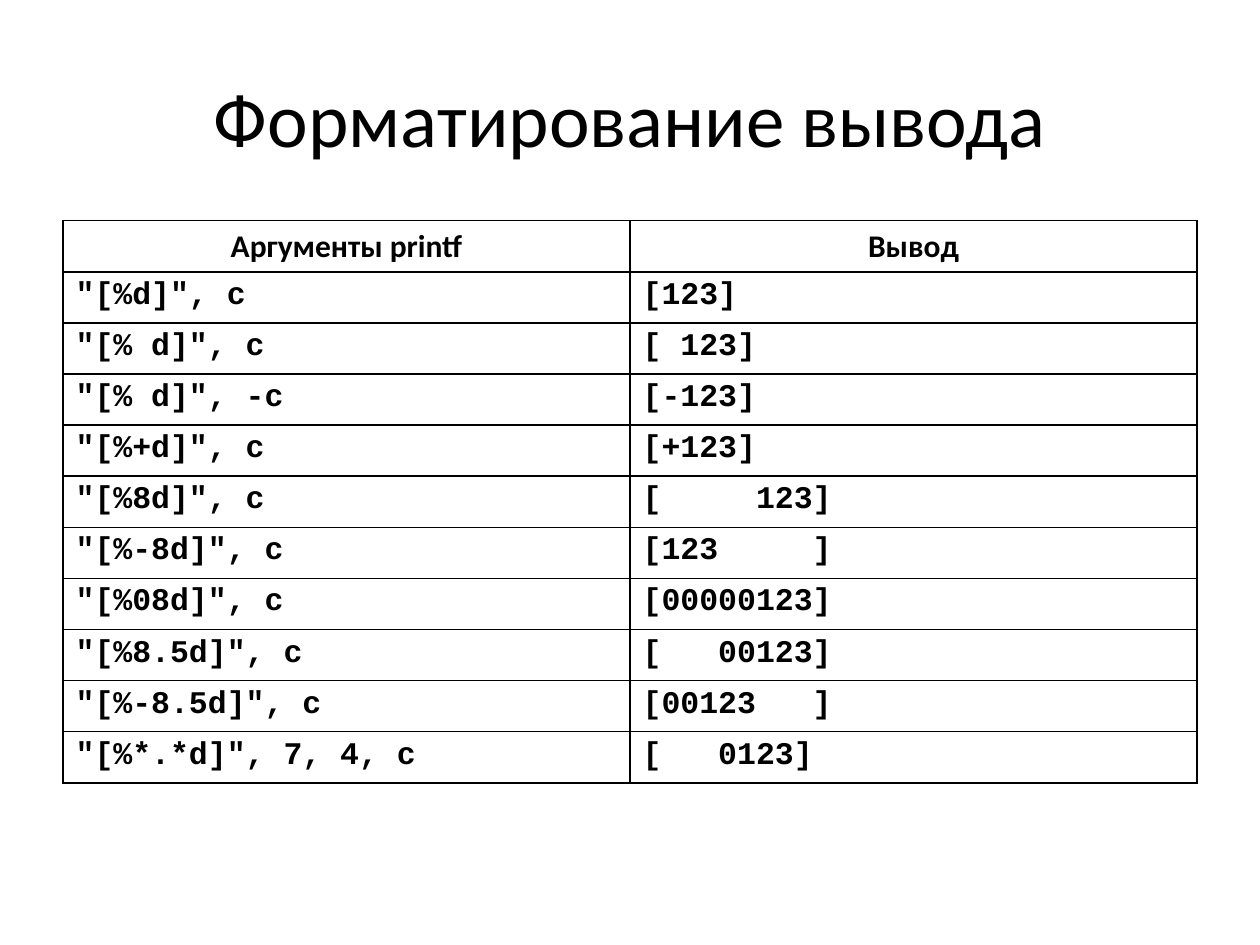
from dataclasses import dataclass

import pptx
import pptx.dml.color
import pptx.enum.text
import pptx.oxml.ns
import pptx.util
from lxml import etree
from pptx.util import Cm, Pt

BLACK = "000000"
WHITE = "FFFFFF"
ROW_HEIGHT = Cm(1.03)
COLUMN_WIDTH = Cm(11.43)
MARGIN = Cm(1.27)


@dataclass
class FormatExample:
    arguments: str
    output: str


HEADINGS = FormatExample("Аргументы printf", "Вывод")
EXAMPLES = [
    FormatExample('"[%d]", c', "[123]"),
    FormatExample('"[% d]", c', "[ 123]"),
    FormatExample('"[% d]", -c', "[-123]"),
    FormatExample('"[%+d]", c', "[+123]"),
    FormatExample('"[%8d]", c', "[     123]"),
    FormatExample('"[%-8d]", c', "[123     ]"),
    FormatExample('"[%08d]", c', "[00000123]"),
    FormatExample('"[%8.5d]", c', "[   00123]"),
    FormatExample('"[%-8.5d]", c', "[00123   ]"),
    FormatExample('"[%*.*d]", 7, 4, c', "[   0123]"),
]


def rgb(value: str) -> pptx.dml.color.RGBColor:
    return pptx.dml.color.RGBColor.from_string(value)


def set_text(frame, text: str, font: str, size: int, bold: bool, centred: bool) -> None:
    frame.text = text
    paragraph = frame.paragraphs[0]
    align = pptx.enum.text.PP_ALIGN
    paragraph.alignment = align.CENTER if centred else align.LEFT
    for run in paragraph.runs:
        run.font.name = font
        run.font.size = Pt(size)
        run.font.bold = bold
        run.font.color.rgb = rgb(BLACK)


def add_borders(cell, color: str, width: int) -> None:
    qn = pptx.oxml.ns.qn
    properties = cell._tc.get_or_add_tcPr()
    for side in ("lnL", "lnR", "lnT", "lnB"):
        line = etree.SubElement(properties, qn(f"a:{side}"), w=str(width))
        fill = etree.SubElement(line, qn("a:solidFill"))
        etree.SubElement(fill, qn("a:srgbClr"), val=color)


def fill_row(table, index: int, example: FormatExample, font: str, centred: bool) -> None:
    table.rows[index].height = ROW_HEIGHT
    for cell, text in zip(table.rows[index].cells, (example.arguments, example.output)):
        set_text(cell.text_frame, text, font, 18, True, centred)
        add_borders(cell, BLACK, Pt(1))
        cell.fill.solid()
        cell.fill.fore_color.rgb = rgb(WHITE)


def main() -> None:
    presentation = pptx.Presentation()
    presentation.slide_width, presentation.slide_height = Cm(25.4), Cm(19.05)
    slide = presentation.slides.add_slide(presentation.slide_layouts[5])

    # Title
    heading = slide.shapes.title
    heading.left, heading.top = MARGIN, Cm(0.76)
    heading.width, heading.height = 2 * COLUMN_WIDTH, Cm(3.18)
    set_text(heading.text_frame, "Форматирование вывода", "Calibri", 44, False, True)
    heading.text_frame.vertical_anchor = pptx.enum.text.MSO_ANCHOR.MIDDLE

    # Table of printf formats and their results
    row_count = len(EXAMPLES) + 1
    formats = slide.shapes.add_table(
        row_count, 2, MARGIN, Cm(4.45), 2 * COLUMN_WIDTH, row_count * ROW_HEIGHT
    ).table
    fill_row(formats, 0, HEADINGS, "Calibri", True)
    for index, example in enumerate(EXAMPLES, start=1):
        fill_row(formats, index, example, "Courier New", False)

    presentation.save("out.pptx")


if __name__ == "__main__":
    main()
